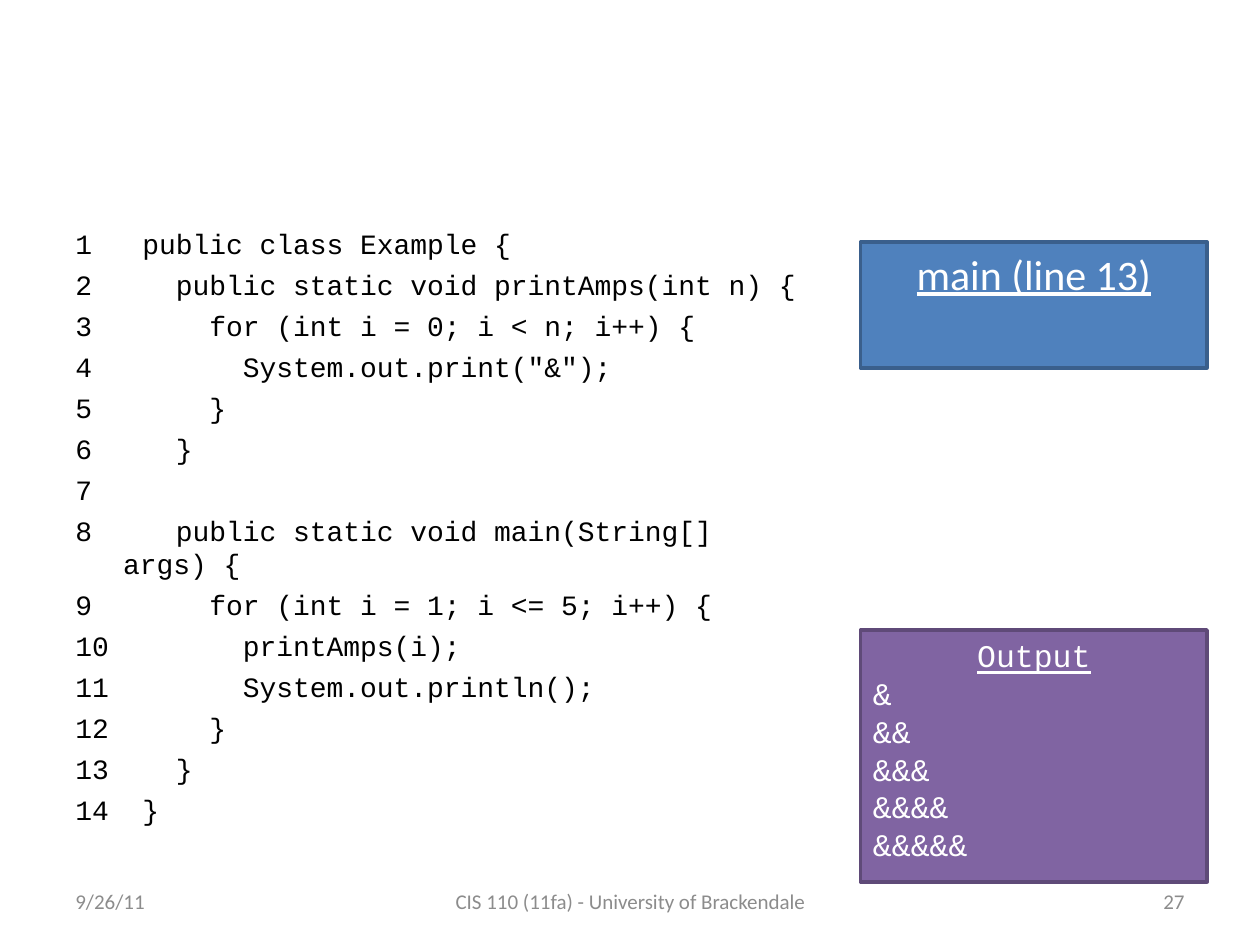
"""Builds a slide that traces a small Java program beside its call stack and output."""
import pptx
import pptx.dml.color
import pptx.enum.shapes
import pptx.enum.text
import pptx.util

Inches = pptx.util.Inches
Pt = pptx.util.Pt
ALIGN = pptx.enum.text.PP_ALIGN
ANCHOR = pptx.enum.text.MSO_ANCHOR

COLORS = {
    "code": "000000",
    "footer": "8C8C8C",
    "white": "FFFFFF",
    "frame": "4F81BD",
    "frame_line": "3A5F8C",
    "output": "8064A2",
    "output_line": "5F4A78",
}
BODY_FONT = "Calibri"
CODE_FONT = "Courier New"

CODE = """\
public class Example {
  public static void printAmps(int n) {
    for (int i = 0; i < n; i++) {
      System.out.print("&");
    }
  }

  public static void main(String[] args) {
    for (int i = 1; i <= 5; i++) {
      printAmps(i);
      System.out.println();
    }
  }
}"""


def color(name):
    return pptx.dml.color.RGBColor.from_string(COLORS[name])


def write(frame, text, *, size, ink, font=BODY_FONT, align=ALIGN.LEFT,
          underline=False, hanging=0, before=0):
    for line in text.split("\n"):
        para = frame.paragraphs[0]
        if para.runs:
            para = frame.add_paragraph()
        para.alignment = align
        para.space_before = Pt(before)
        if hanging:
            properties = para._p.get_or_add_pPr()
            properties.set("marL", str(Inches(hanging)))
            properties.set("indent", str(-Inches(hanging)))
        span = para.add_run()
        span.text = line
        span.font.name = font
        span.font.size = Pt(size)
        span.font.underline = underline
        span.font.color.rgb = color(ink)


class Painter:
    def __init__(self, slide):
        self.slide = slide

    def text_box(self, left, top, width, height, text, anchor=ANCHOR.TOP, **style):
        box = self.slide.shapes.add_textbox(*map(Inches, (left, top, width, height)))
        box.text_frame.word_wrap = True
        box.text_frame.vertical_anchor = anchor
        write(box.text_frame, text, **style)

    def panel(self, left, top, width, height, fill, heading, **style):
        box = self.slide.shapes.add_shape(
            pptx.enum.shapes.MSO_SHAPE.RECTANGLE,
            *map(Inches, (left, top, width, height)))
        box.shadow.inherit = False
        box.fill.solid()
        box.fill.fore_color.rgb = color(fill)
        box.line.color.rgb = color(fill + "_line")
        box.line.width = Pt(2)
        frame = box.text_frame
        frame.word_wrap = True
        frame.vertical_anchor = ANCHOR.TOP
        write(frame, heading, ink="white", align=ALIGN.CENTER, underline=True, **style)
        return frame


def main():
    deck = pptx.Presentation()
    deck.slide_width, deck.slide_height = Inches(10), Inches(7.5)
    painter = Painter(deck.slides.add_slide(deck.slide_layouts[6]))

    listing = "\n".join(f"{number:<4}{line}".rstrip()
                        for number, line in enumerate(CODE.split("\n"), 1))
    painter.text_box(0.5, 1.75, 6, 5, listing, size=16, ink="code",
                     font=CODE_FONT, hanging=0.38, before=4.2)

    for left, width, text, align in (
        (0.5, 2.33, "9/26/11", ALIGN.LEFT),
        (3.42, 3.17, "CIS 110 (11fa) - University of Brackendale", ALIGN.CENTER),
        (7.17, 2.33, "27", ALIGN.RIGHT),
    ):
        painter.text_box(left, 6.95, width, 0.4, text, anchor=ANCHOR.MIDDLE,
                         size=12, ink="footer", align=align)

    output = painter.panel(6.83, 5, 2.75, 2, "output", "Output",
                           size=18, font=CODE_FONT)
    write(output, "\n".join("&" * count for count in range(1, 6)),
          size=18, ink="white", font=CODE_FONT)
    painter.panel(6.83, 1.92, 2.75, 1, "frame", "main (line 13)", size=24)

    deck.save("out.pptx")


if __name__ == "__main__":
    main()
